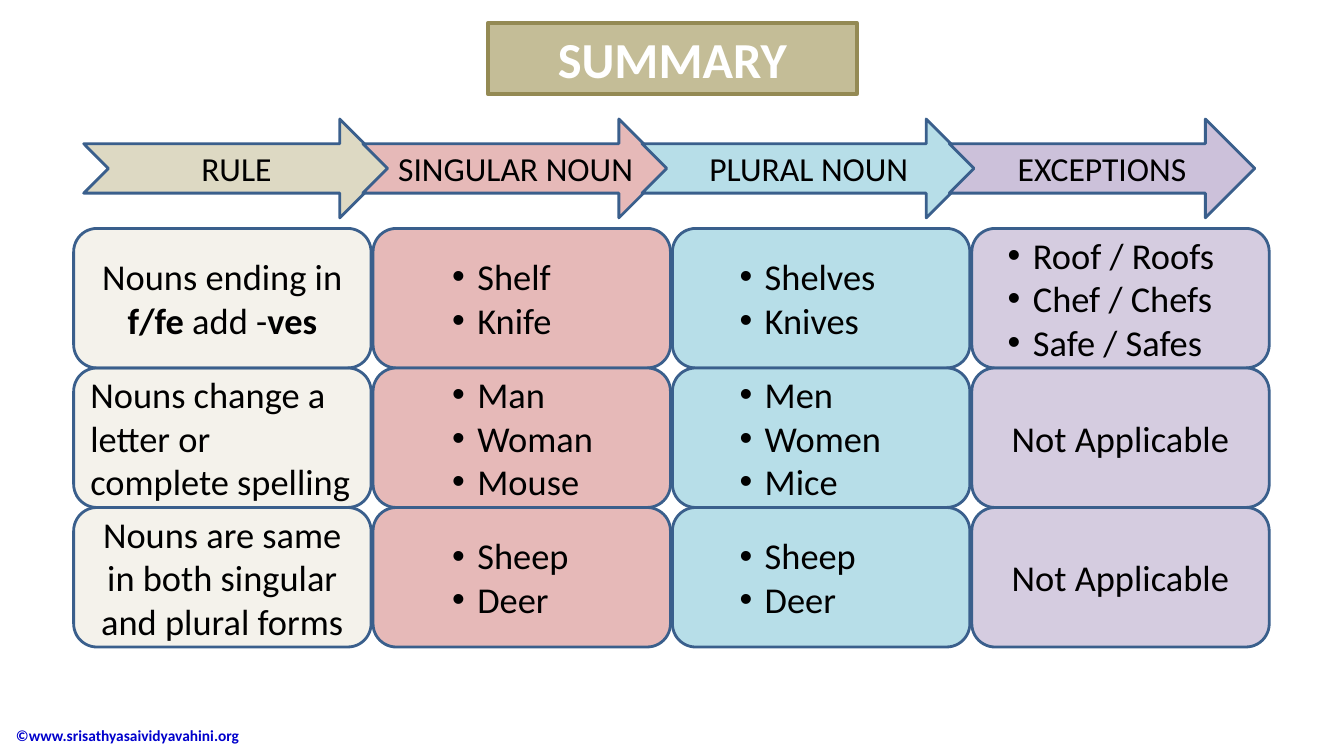
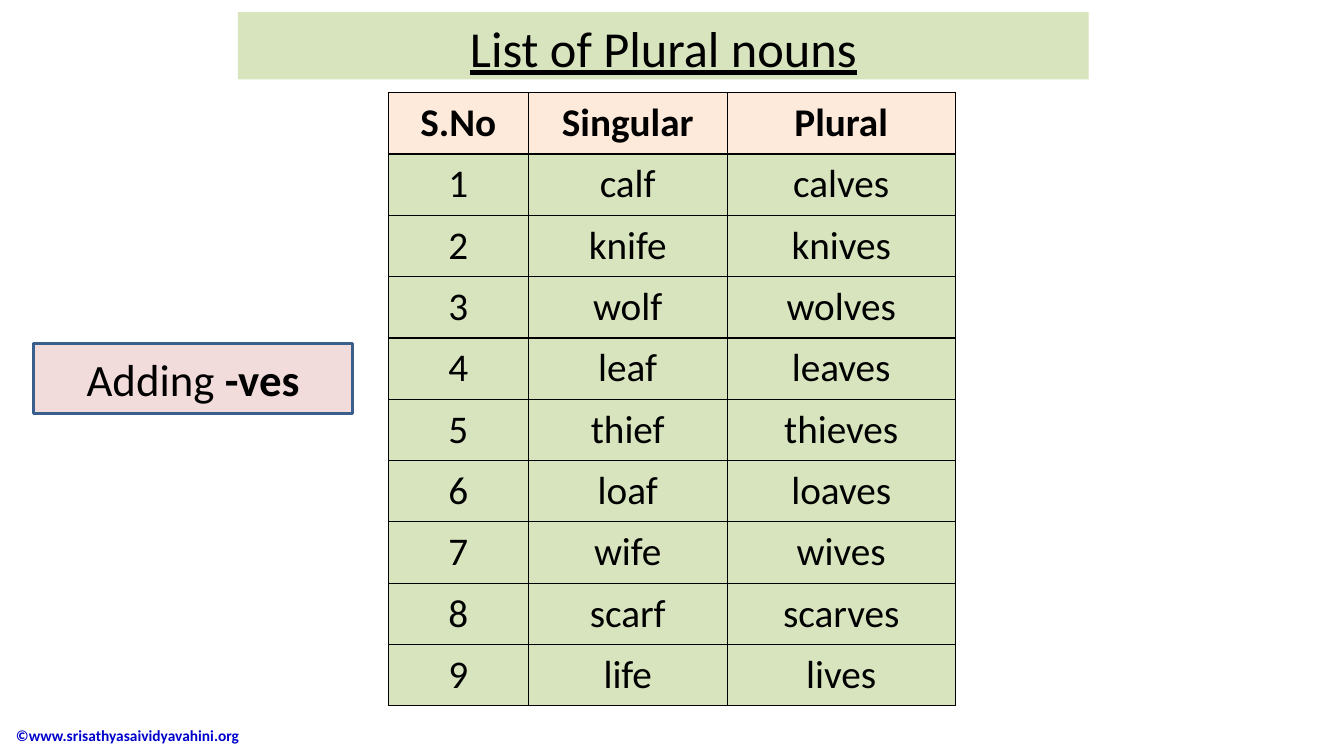
from itertools import product
from pptx import Presentation
from pptx.dml.color import RGBColor
from pptx.enum.shapes import MSO_SHAPE
from pptx.enum.text import MSO_ANCHOR, MSO_AUTO_SIZE, PP_ALIGN
from pptx.oxml.ns import qn
from pptx.util import Pt
from lxml.etree import SubElement

FONT = "Calibri"
BLACK, WHITE, BLUE = "000000", "FFFFFF", "3A5F8C"
TAN, ROSE, AQUA, LILAC, GREEN = "DDD9C3", "E6B9B8", "B7DEE8", "CCC1DA", "D7E4BD"

# Column heading, colour, opacity of the cells, arrow width, bullet indent
COLUMNS = [
    ("RULE", TAN, 32, 218.2, 0),
    ("SINGULAR NOUN", ROSE, 100, 218.2, 62.6),
    ("PLURAL NOUN", AQUA, 100, 238.3, 54),
    ("EXCEPTIONS", LILAC, 82, 218.2, 31.7),
]
# A list is bulleted, a string is plain; ** switches bold on and off
RULES = [
    ("Nouns ending in **f/fe **add -**ves", ["Shelf", "Knife"], ["Shelves", "Knives"],
     ["Roof / Roofs", "Chef / Chefs", "Safe / Safes"]),
    ("Nouns change a letter or\vcomplete spelling", ["Man", "Woman", "Mouse"],
     ["Men", "Women", "Mice"], "Not Applicable"),
    ("Nouns are same in both singular and plural forms", ["Sheep", "Deer"],
     ["Sheep", "Deer"], "Not Applicable"),
]
PAIRS = [("calf", "calves"), ("knife", "knives"), ("wolf", "wolves"),
         ("leaf", "leaves"), ("thief", "thieves"), ("loaf", "loaves"),
         ("wife", "wives"), ("scarf", "scarves"), ("life", "lives")]


def rgb(code):
    return RGBColor.from_string(code)


def paint(shape, fill, line=None, width=2, alpha=100):
    shape.fill.solid()
    shape.fill.fore_color.rgb = rgb(fill)
    if alpha < 100:
        tint = shape.fill._xPr.find(qn("a:solidFill"))[0]
        SubElement(tint, qn("a:alpha"), val=str(alpha * 1000))
    if line:
        shape.line.color.rgb = rgb(line)
        shape.line.width = Pt(width)
    else:
        shape.line.fill.background()


def style(para, size, color=BLACK, bold=False, align=PP_ALIGN.CENTER):
    para.alignment = align
    for run in para.runs:
        font = run.font
        font.name, font.size, font.bold = FONT, Pt(size), bold
        font.color.rgb = rgb(color)


def write(frame, text, size):
    """Centred text whose parts between ** are bold."""
    para = frame.paragraphs[0]
    parts = text.split("**")
    para.text = parts[0]
    for part in parts[1:]:
        para.add_run().text = part
    style(para, size)
    if len(parts) > 1:
        for i, run in enumerate(para.runs):
            run.font.bold = i % 2 == 1


def bullets(frame, items, size, indent):
    frame.text = "\n".join(items)
    for para in frame.paragraphs:
        props = para._p.get_or_add_pPr()
        props.set("marL", str(Pt(indent)))
        props.set("indent", str(-Pt(18)))
        SubElement(props, qn("a:buFont"), typeface="Arial")
        SubElement(props, qn("a:buChar"), char="•")
        style(para, size, align=PP_ALIGN.LEFT)


def block(slide, kind, box, fill, alpha=100):
    shape = slide.shapes.add_shape(kind, *map(Pt, box))
    shape.shadow.inherit = False
    paint(shape, fill, BLUE, alpha=alpha)
    shape.text_frame.word_wrap = True
    shape.text_frame.vertical_anchor = MSO_ANCHOR.MIDDLE
    return shape


def start(deck, text, box, fill, color, line=None, bold=False):
    """New slide with its title band and the shared footer."""
    slide = deck.slides.add_slide(deck.slide_layouts[5])
    title = slide.shapes.title
    title.left, title.top, title.width, title.height = map(Pt, box)
    paint(title, fill, line, 3)
    frame = title.text_frame
    frame.text = text
    frame.auto_size = MSO_AUTO_SIZE.NONE
    frame.vertical_anchor = MSO_ANCHOR.TOP
    style(frame.paragraphs[0], 36, color, bold)
    foot = slide.shapes.add_textbox(Pt(4.3), Pt(511), Pt(254), Pt(29)).text_frame
    foot.word_wrap = True
    foot.vertical_anchor = MSO_ANCHOR.MIDDLE
    foot.text = "©www.srisathyasaividyavahini.org"
    style(foot.paragraphs[0], 11, "0000CC", True, PP_ALIGN.LEFT)
    return slide


def arrows(slide, left, top, height):
    for name, color, _, width, _ in COLUMNS:
        arrow = block(slide, MSO_SHAPE.NOTCHED_RIGHT_ARROW,
                      (left, top, width, height), color)
        frame = arrow.text_frame
        frame.margin_left = frame.margin_right = 0
        write(frame, name, 24)
        left += width - 18.8  # the tip fits into the next notch


def grid(slide, left, top, width, height):
    step, drop = width / len(COLUMNS), height / len(RULES)
    for row, col in product(range(len(RULES)), range(len(COLUMNS))):
        _, color, alpha, _, indent = COLUMNS[col]
        cell = block(slide, MSO_SHAPE.ROUNDED_RECTANGLE,
                     (left + col * step, top + row * drop, step - 1.4, drop),
                     color, alpha)
        frame, text = cell.text_frame, RULES[row][col]
        if isinstance(text, list):
            bullets(frame, text, 26, indent)
        else:
            write(frame, text, 26)
            if "\v" in text:
                frame.paragraphs[0].alignment = PP_ALIGN.LEFT


def border(cell):
    props = cell._tc.get_or_add_tcPr()
    for side in ("lnL", "lnR", "lnT", "lnB"):
        line = SubElement(props, qn("a:" + side), w=str(Pt(1)))
        fill = SubElement(line, qn("a:solidFill"))
        SubElement(fill, qn("a:srgbClr"), val=BLACK)


def table(slide, left, top, widths, height):
    rows = [("S.No", "Singular", "Plural")]
    rows += [(str(i), *pair) for i, pair in enumerate(PAIRS, 1)]
    grid = slide.shapes.add_table(len(rows), len(widths), Pt(left), Pt(top),
                                  Pt(sum(widths)), Pt(height * len(rows))).table
    for col, width in zip(grid.columns, widths):
        col.width = Pt(width)
    for r, row in enumerate(rows):
        grid.rows[r].height = Pt(height)
        for c, text in enumerate(row):
            cell = grid.cell(r, c)
            border(cell)
            cell.fill.solid()
            cell.fill.fore_color.rgb = rgb(GREEN if r else "FDEADA")
            cell.vertical_anchor = MSO_ANCHOR.MIDDLE
            cell.text_frame.text = text
            style(cell.text_frame.paragraphs[0], 28, bold=r == 0)


def recap(deck):
    slide = start(deck, "SUMMARY", (348.5, 16.6, 263.5, 50.4), "C4BD97",
                  WHITE, "948A54", True)
    arrows(slide, 59.8, 85, 70.6)
    grid(slide, 52.6, 163.2, 855.4, 299)


def plurals(deck):
    slide = start(deck, "List of Plural nouns", (170, 8.6, 607.7, 48.2),
                  GREEN, BLACK)
    slide.shapes.title.text_frame.paragraphs[0].runs[0].font.underline = True
    label = block(slide, MSO_SHAPE.RECTANGLE, (23.8, 245.5, 228.2, 49.7), "F2DCDB")
    write(label.text_frame, "Adding **-ves", 32)
    table(slide, 277.4, 66.2, (100, 142, 163), 43.8)


def main():
    deck = Presentation()
    deck.slide_width, deck.slide_height = Pt(960), Pt(540)
    recap(deck)
    plurals(deck)
    deck.save("out.pptx")


if __name__ == "__main__":
    main()
